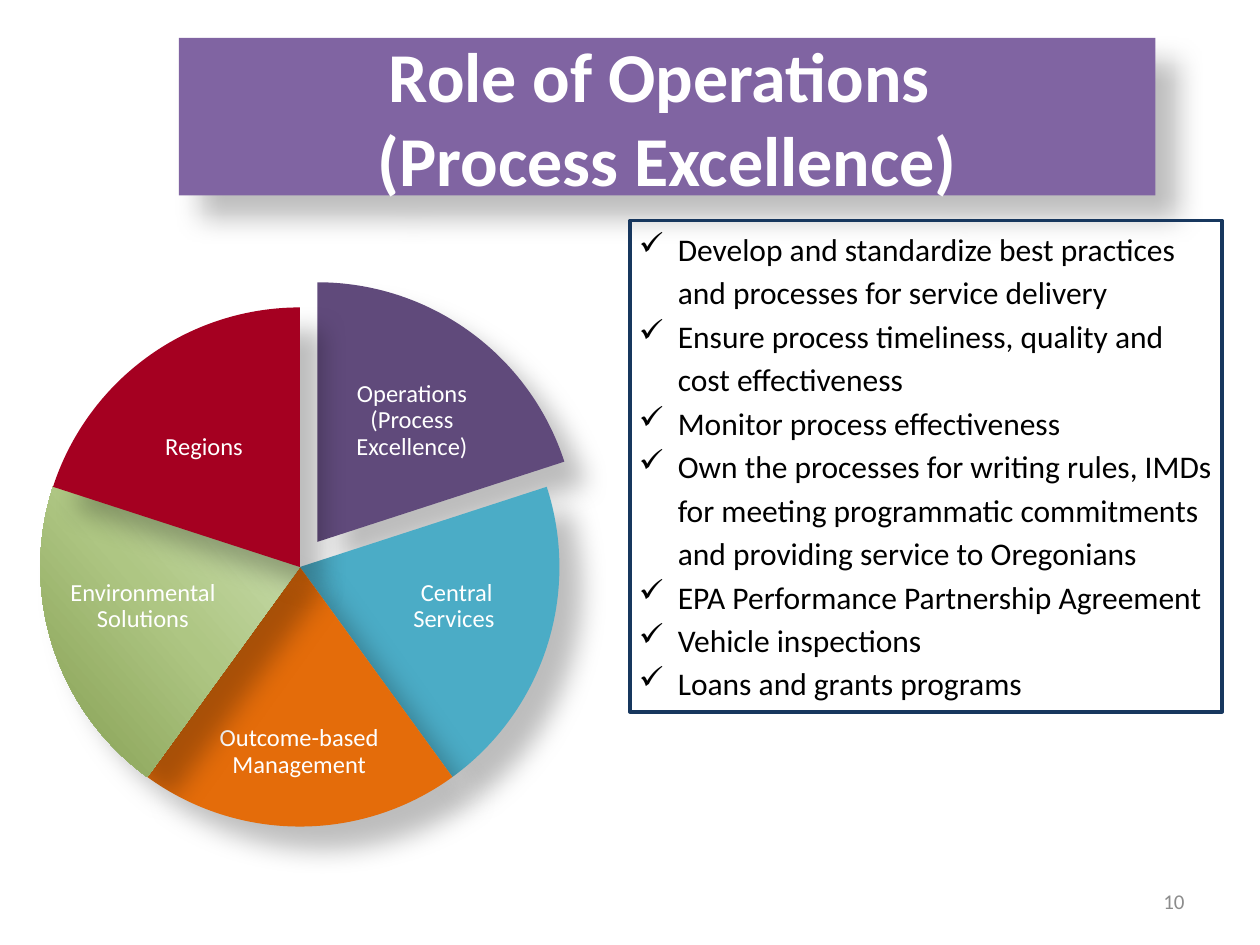
from lxml import etree
from pptx import Presentation
from pptx import util as u
from pptx.dml.color import RGBColor
from pptx.enum import shapes, text
from pptx.oxml import ns

COLORS = {
    "white": "FFFFFF", "black": "000000", "grey": "8C8C8C", "navy": "17375E",
    "title": "8064A2", "purple": "604A7B", "teal": "4BACC6", "orange": "E46C0A",
    "red": "A50021", "green dark": "7C9647", "green mid": "ADC682",
    "green light": "C0D59F", "green soft": "AEC683",
}
GREEN_STOPS = [(0, "green dark"), (33, "green mid"), (47, "green light"),
               (53, "green light"), (68, "green soft"), (100, "green dark")]
TITLE = ["Role of Operations ", "(Process Excellence)"]
SLICES = [
    ("Operations (Process Excellence)", "purple", (0.46, 2.24), (2.57, 2.86, 1.4, 0.96)),
    ("Central Services ", "teal", (0.32, 2.44), (3.01, 4.3, 1.23, 1.03)),
    ("Outcome-based Management", "orange", (0.32, 2.44), (1.64, 5.53, 1.47, 0.88)),
    ("Environmental Solutions", GREEN_STOPS, (0.32, 2.44), (0.52, 4.3, 1.23, 1.03)),
    ("Regions", "red", (0.32, 2.44), (0.92, 3.07, 1.4, 0.96)),
]
DUTIES = [
    "Develop and standardize best practices and processes for service delivery",
    "Ensure process timeliness, quality and cost effectiveness",
    "Monitor process effectiveness",
    "Own the processes for writing rules, IMDs for meeting programmatic "
    "commitments and providing service to Oregonians",
    "EPA Performance Partnership Agreement",
    "Vehicle inspections",
    "Loans and grants programs",
]
PIE_SIZE = 4.12
DEGREE = 0.6


def rgb(name):
    return RGBColor.from_string(COLORS[name])


def inches(*values):
    return [u.Inches(value) for value in values]


def add_node(parent, tag, **attributes):
    return etree.SubElement(parent, ns.qn(tag), attributes)


def add_color(parent, name):
    return add_node(parent, "a:srgbClr", val=COLORS[name])


def add_shadow(shape):
    effects = add_node(shape._element.spPr, "a:effectLst")
    shadow = add_node(effects, "a:outerShdw", blurRad=str(u.Pt(15)),
                      dist=str(u.Pt(18)), dir=str(45 * 60000),
                      algn="tl", rotWithShape="0")
    add_node(add_color(shadow, "black"), "a:alpha", val="26000")


def fill_gradient(shape, stops, angle):
    shape.fill.gradient()
    gradient = shape._element.spPr.find(ns.qn("a:gradFill"))
    for child in list(gradient):
        gradient.remove(child)
    stop_list = add_node(gradient, "a:gsLst")
    for place, color in stops:
        add_color(add_node(stop_list, "a:gs", pos=str(place * 1000)), color)
    add_node(gradient, "a:lin", ang=str(angle * 60000), scaled="0")


def add_filled(parent, kind, area, fill):
    shape = parent.shapes.add_shape(kind, *inches(*area))
    if isinstance(fill, str):
        shape.fill.solid()
        shape.fill.fore_color.rgb = rgb(fill)
    else:
        fill_gradient(shape, fill, 139)
    shape.line.fill.background()
    add_shadow(shape)
    return shape


def set_frame(shape, anchor, margins=(0.1, 0.05)):
    frame = shape.text_frame
    frame.word_wrap = True
    frame.vertical_anchor = anchor
    frame.margin_left = frame.margin_right = u.Inches(margins[0])
    frame.margin_top = frame.margin_bottom = u.Inches(margins[1])
    return frame


def add_span(para, words, size, color, align, bold=False):
    para.alignment = align
    span = para.add_run()
    span.text = words
    span.font.name = "Calibri"
    span.font.size = u.Pt(size)
    span.font.bold = bold
    span.font.color.rgb = rgb(color)


def add_pie(page):
    group = page.shapes.add_group_shape()
    sweep = 360 / len(SLICES)
    for index, (label, fill, corner, label_area) in enumerate(SLICES):
        start = (270 + index * sweep) % 360
        piece = add_filled(group, shapes.MSO_SHAPE.PIE,
                           (*corner, PIE_SIZE, PIE_SIZE), fill)
        piece.adjustments[0] = start * DEGREE
        piece.adjustments[1] = (start + sweep) % 360 * DEGREE
        box = group.shapes.add_textbox(*inches(*label_area))
        frame = set_frame(box, text.MSO_ANCHOR.MIDDLE, (0.02, 0.02))
        para = frame.paragraphs[0]
        para.line_spacing = 0.9
        add_span(para, label, 14, "white", text.PP_ALIGN.CENTER)


def add_title(page):
    banner = add_filled(page, shapes.MSO_SHAPE.RECTANGLE, (1.42, 0.3, 7.75, 1.25), "title")
    para = set_frame(banner, text.MSO_ANCHOR.MIDDLE).paragraphs[0]
    for index, line in enumerate(TITLE):
        if index:
            para.add_line_break()
        add_span(para, line, 40, "white", text.PP_ALIGN.CENTER, bold=True)


def add_page_number(page):
    box = page.shapes.add_textbox(*inches(7.17, 6.95, 2.33, 0.4))
    para = set_frame(box, text.MSO_ANCHOR.MIDDLE).paragraphs[0]
    add_span(para, "10", 12, "grey", text.PP_ALIGN.RIGHT)


def add_duties(page):
    box = page.shapes.add_shape(shapes.MSO_SHAPE.RECTANGLE, *inches(5, 1.75, 4.7, 3.9))
    box.shadow.inherit = False
    box.fill.background()
    box.line.color.rgb = rgb("navy")
    box.line.width = u.Pt(2)
    frame = set_frame(box, text.MSO_ANCHOR.TOP, (0.07, 0.03))
    frame.auto_size = text.MSO_AUTO_SIZE.SHAPE_TO_FIT_TEXT
    indent = u.Inches(0.31)
    for index, duty in enumerate(DUTIES):
        para = frame.add_paragraph() if index else frame.paragraphs[0]
        para.line_spacing = 1.15
        settings = para._p.get_or_add_pPr()
        settings.set("marL", str(indent))
        settings.set("indent", str(-indent))
        add_node(settings, "a:buChar", char="✓")
        add_span(para, duty, 18, "black", text.PP_ALIGN.LEFT)


def main():
    deck = Presentation()
    deck.slide_width, deck.slide_height = inches(10, 7.5)
    page = deck.slides.add_slide(deck.slide_layouts[6])
    add_pie(page)
    add_title(page)
    add_page_number(page)
    add_duties(page)
    deck.save("out.pptx")


if __name__ == "__main__":
    main()
